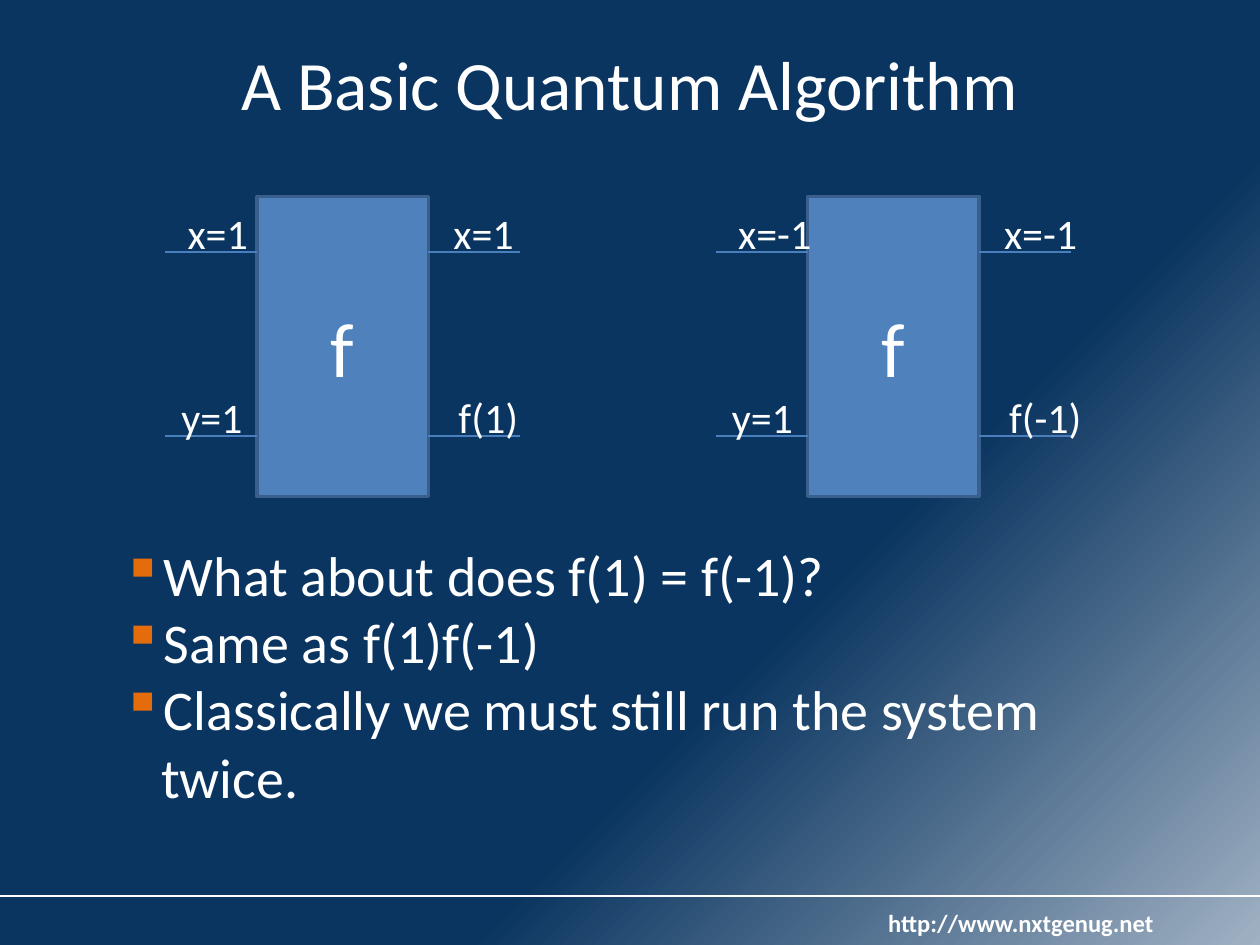
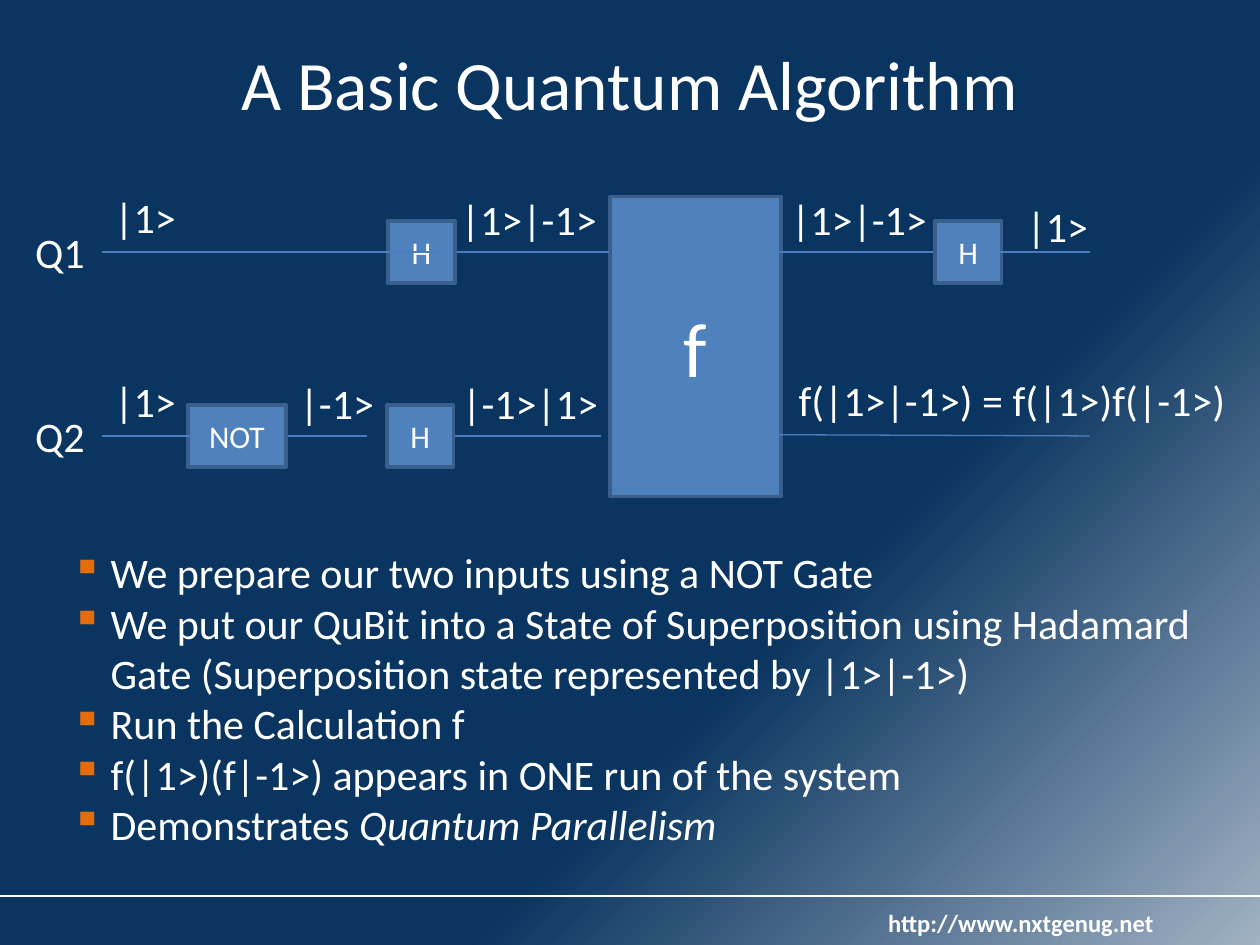
from dataclasses import dataclass

from pptx import Presentation
from pptx.dml.color import RGBColor
from pptx.enum.shapes import MSO_CONNECTOR, MSO_SHAPE
from pptx.enum.text import MSO_ANCHOR, PP_ALIGN
from pptx.oxml import parse_xml
from pptx.oxml.ns import nsdecls
from pptx.util import Inches, Pt

LEFT, CENTER = PP_ALIGN.LEFT, PP_ALIGN.CENTER
TOP, MIDDLE = MSO_ANCHOR.TOP, MSO_ANCHOR.MIDDLE
STRAIGHT = MSO_CONNECTOR.STRAIGHT
RECTANGLE = MSO_SHAPE.RECTANGLE


@dataclass(frozen=True)
class Theme:
    font: str = "Calibri"
    text: str = "FFFFFF"
    navy: str = "0A3560"
    glow: str = "A0B1C3"
    gate: str = "4F81BD"
    gate_edge: str = "3A5F8C"
    wire: str = "4B7EBC"
    bullet: str = "E46C0A"
    title_size: float = 39.6
    function_size: float = 44
    large_size: float = 32
    label_size: float = 24
    gate_size: float = 18
    footer_size: float = 14
    edge_width: float = 2
    rule_width: float = 1.5
    wire_width: float = 0.75


THEME = Theme()
SLIDE_WIDTH, SLIDE_HEIGHT = 10, 7.5
CIRCUIT_TOP = 1.56
FUNCTION_WIDTH, FUNCTION_HEIGHT = 1.36, 2.38
UPPER, LOWER = 0.44, 1.9
GATE_WIDTH, GATE_HEIGHT = 0.53, 0.49
LABEL_HEIGHT = 0.5
STUB = 0.73
INDENT = 0.31


def rgb(color):
    return RGBColor.from_string(color)


def apply_format(target, values):
    for name, value in values.items():
        setattr(target, name, value)


def write(paragraph, words, size, **style):
    run = paragraph.add_run()
    run.text = words
    apply_format(run.font, {"name": THEME.font, "size": Pt(size), **style})
    run.font.color.rgb = rgb(THEME.text)


def add_text(slide, words, box, size, align=LEFT, anchor=TOP, wrap=False, **style):
    frame = slide.shapes.add_textbox(*map(Inches, box)).text_frame
    apply_format(frame, {"word_wrap": wrap, "vertical_anchor": anchor})
    frame.paragraphs[0].alignment = align
    write(frame.paragraphs[0], words, size, **style)


def add_label(slide, words, left, top, width):
    add_text(slide, words, (left, top, width, LABEL_HEIGHT), THEME.label_size)


def add_line(slide, start, end, color=THEME.wire, width=THEME.wire_width):
    line = slide.shapes.add_connector(STRAIGHT, *map(Inches, (*start, *end)))
    line.line.color.rgb = rgb(color)
    line.line.width = Pt(width)
    line._element.spPr.append(parse_xml(f"<a:effectLst {nsdecls('a')}/>"))


def add_wire(slide, start, end, y):
    add_line(slide, (start, y), (end, y))


def add_gate(slide, name, box, size=THEME.gate_size):
    gate = slide.shapes.add_shape(RECTANGLE, *map(Inches, box))
    gate.shadow.inherit = False
    gate.fill.solid()
    gate.fill.fore_color.rgb = rgb(THEME.gate)
    gate.line.color.rgb = rgb(THEME.gate_edge)
    gate.line.width = Pt(THEME.edge_width)
    apply_format(gate.text_frame, {"word_wrap": True, "vertical_anchor": MIDDLE})
    gate.text_frame.paragraphs[0].alignment = CENTER
    write(gate.text_frame.paragraphs[0], name, size)


def add_function(slide, left, top):
    box = (left, top, FUNCTION_WIDTH, FUNCTION_HEIGHT)
    add_gate(slide, "f", box, THEME.function_size)


def add_small_gate(slide, name, left, wire_y, width=GATE_WIDTH):
    add_gate(slide, name, (left, wire_y - GATE_HEIGHT / 2, width, GATE_HEIGHT))


def add_bullets(slide, points, box, size):
    frame = slide.shapes.add_textbox(*map(Inches, box)).text_frame
    frame.word_wrap = True
    for index, (plain, emphasis) in enumerate(points):
        paragraph = frame.add_paragraph() if index else frame.paragraphs[0]
        properties = paragraph._p.get_or_add_pPr()
        properties.set("marL", str(Inches(INDENT)))
        properties.set("indent", str(Inches(-INDENT)))
        for content in (
            f'<a:buClr {nsdecls("a")}><a:srgbClr val="{THEME.bullet}"/></a:buClr>',
            f'<a:buChar {nsdecls("a")} char="▪"/>',
        ):
            properties.append(parse_xml(content))
        write(paragraph, plain, size)
        if emphasis:
            write(paragraph, emphasis, size, italic=True)


def add_background(slide):
    slide._element.cSld.insert(0, parse_xml(
        f'<p:bg {nsdecls("p", "a")}><p:bgPr><a:gradFill rotWithShape="1"><a:gsLst>'
        f'<a:gs pos="0"><a:srgbClr val="{THEME.glow}"/></a:gs>'
        f'<a:gs pos="36000"><a:srgbClr val="{THEME.navy}"/></a:gs></a:gsLst>'
        '<a:path path="circle"><a:fillToRect l="100000" t="100000"/></a:path>'
        '</a:gradFill><a:effectLst/></p:bgPr></p:bg>'))


def start_slide(deck, title):
    slide = deck.slides.add_slide(deck.slide_layouts[6])
    add_background(slide)
    rule_y = 7.11
    add_line(slide, (0, rule_y), (SLIDE_WIDTH, rule_y), THEME.text, THEME.rule_width)
    add_text(slide, "http://www.nxtgenug.net", (6.95, 7.16, 2.32, 0.34),
             THEME.footer_size, bold=True)
    add_text(slide, title, (0.5, 0.3, 9, 0.72), THEME.title_size,
             CENTER, MIDDLE, wrap=True)
    return slide


def add_classical_run(slide, left, top, value):
    x_label, result = f"x={value}", f"f({value})"
    wide = 0.1 * (len(value) - 1)
    function_left = left + STUB
    function_right = function_left + FUNCTION_WIDTH
    add_function(slide, function_left, top)
    for row in (UPPER, LOWER):
        for start in (left, function_right):
            add_wire(slide, start, start + STUB, top + row)
    for words, offset, row, width in (
        (x_label, 0.08, UPPER, 0.69 + wide),
        (x_label, 2.19, UPPER, 0.69 + wide),
        ("y=1", 0.03, LOWER, 0.69),
        (result, 2.23, LOWER, 0.68 + wide),
    ):
        add_label(slide, words, left + offset, top + row - 0.4, width)


def add_superposition(slide, left, top):
    for words, gate_left, row, wire_end, label_left, rise in (
        ("|1>|-1>", 0.01, UPPER, 1.76, 0.49, 0.51),
        ("|-1>|1>", 0, LOWER, 1.7, 0.5, 0.51),
    ):
        wire_y = top + row
        add_wire(slide, left + 0.54, left + wire_end, wire_y)
        add_label(slide, words, left + label_left, wire_y - rise, 1.29)
        add_small_gate(slide, "H", left + gate_left, wire_y)


def add_preparation(slide, left, top):
    upper, lower = top + UPPER, top + LOWER
    add_wire(slide, left + 0.63, left + 3.3, upper)
    add_wire(slide, left + 1.52, left + 2.73, lower)
    add_small_gate(slide, "NOT", left + 1.31, lower, 0.78)
    add_wire(slide, left + 0.63, left + 0.63 + STUB, lower)
    for qubit, wire_y in (("Q1", upper), ("Q2", lower)):
        add_label(slide, "|1>", left + 0.63, wire_y - 0.53, 0.69)
        add_label(slide, qubit, left, wire_y - 0.25, 0.6)
    add_label(slide, "|-1>", left + 2.1, lower - 0.51, 0.8)


def add_readout(slide, left, top):
    upper, lower = top + UPPER, top + LOWER
    gate_left, wire_end = left + 1.25, left + 2.48
    add_wire(slide, left, gate_left, upper)
    add_line(slide, (left, lower - 0.01), (wire_end, lower))
    add_small_gate(slide, "H", gate_left, upper)
    add_wire(slide, wire_end - STUB, wire_end, upper)
    add_label(slide, "|1>", left + 1.88, upper - 0.46, 0.69)
    add_label(slide, "|1>|-1>", left + 0.01, upper - 0.51, 1.29)
    add_label(slide, "f(|1>|-1>) = f(|1>)f(|-1>)", left + 0.07, lower - 0.54, 3.63)


def build_classical_slide(deck):
    slide = start_slide(deck, "A Basic Quantum Algorithm")
    add_classical_run(slide, 1.31, CIRCUIT_TOP, "1")
    add_bullets(slide, (
        ("What about does f(1) = f(-1)?", ""),
        ("Same as f(1)f(-1)", ""),
        ("Classically we must still run the system twice.", ""),
    ), (0.87, 4.24, 8.43, 2.26), THEME.large_size)
    add_classical_run(slide, 5.68, CIRCUIT_TOP, "-1")


def build_quantum_slide(deck):
    slide = start_slide(deck, "A Basic Quantum Algorithm")
    add_function(slide, 4.84, CIRCUIT_TOP)
    add_superposition(slide, 3.07, CIRCUIT_TOP)
    add_preparation(slide, 0.18, CIRCUIT_TOP)
    add_bullets(slide, (
        ("We prepare our two inputs using a NOT Gate", ""),
        ("We put our QuBit into a State of Superposition using Hadamard Gate "
         "(Superposition state represented by |1>|-1>)", ""),
        ("Run the Calculation f", ""),
        ("f(|1>)(f|-1>) appears in ONE run of the system", ""),
        ("Demonstrates ", "Quantum Parallelism"),
    ), (0.47, 4.29, 9.11, 2.52), THEME.label_size)
    add_readout(slide, 6.17, CIRCUIT_TOP)


def main():
    deck = Presentation()
    deck.slide_width, deck.slide_height = Inches(SLIDE_WIDTH), Inches(SLIDE_HEIGHT)
    build_classical_slide(deck)
    build_quantum_slide(deck)
    deck.save("out.pptx")


if __name__ == "__main__":
    main()
